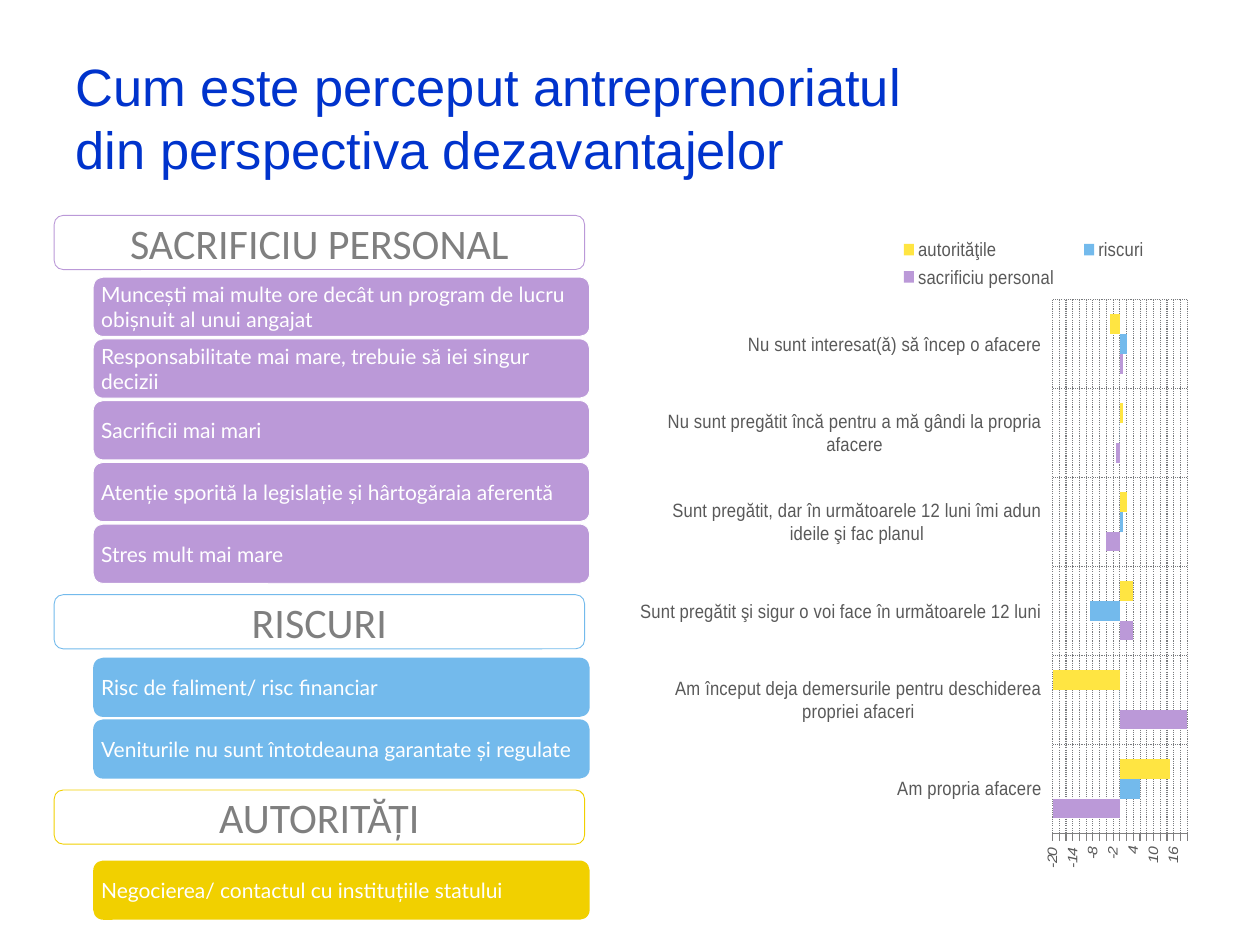
"""Build the slide on the perceived drawbacks of entrepreneurship."""
from lxml import etree
from pptx import Presentation
from pptx.chart.data import CategoryChartData
from pptx.dml.color import RGBColor
from pptx.enum.chart import XL_CHART_TYPE, XL_LEGEND_POSITION, XL_TICK_LABEL_POSITION, XL_TICK_MARK
from pptx.enum.dml import MSO_LINE
from pptx.enum.shapes import MSO_SHAPE
from pptx.enum.text import MSO_ANCHOR, PP_ALIGN
from pptx.oxml.ns import qn
from pptx.util import Inches, Pt

ROUNDED = MSO_SHAPE.ROUNDED_RECTANGLE
MIDDLE = MSO_ANCHOR.MIDDLE
LEFT, CENTER = PP_ALIGN.LEFT, PP_ALIGN.CENTER
NO_TICK, TICK_OUT = XL_TICK_MARK.NONE, XL_TICK_MARK.OUTSIDE
LOW = XL_TICK_LABEL_POSITION.LOW
BARS, LEGEND_TOP = XL_CHART_TYPE.BAR_CLUSTERED, XL_LEGEND_POSITION.TOP
DOTTED = MSO_LINE.ROUND_DOT

COLORS = {
    "title": "0033CC", "heading": "7F7F7F", "white": "FFFFFF", "label": "595959",
    "grid": "797B7E", "axis": "808080", "sacrifice": "BB99D8", "risk": "73BAEC",
    "authority": "F1D000", "authority_bar": "FFE542",
}
RGB = {name: RGBColor.from_string(value) for name, value in COLORS.items()}

HEADING_LEFT, HEADING_WIDTH, HEADING_HEIGHT = 0.43, 4.21, 0.43
ITEM_LEFT, ITEM_WIDTH, ITEM_HEIGHT = 0.74, 3.94, 0.47
ROW_STEP, SECTION_GAP = 0.49, 0.07

SECTIONS = [
    ("SACRIFICIU PERSONAL", "sacrifice", 0.49, True, [
        "Muncești mai multe ore decât un program de lucru obișnuit al unui angajat",
        "Responsabilitate mai mare, trebuie să iei singur decizii",
        "Sacrificii mai mari",
        "Atenție sporită la legislație și hârtogăraia aferentă",
        "Stres mult mai mare",
    ]),
    ("RISCURI", "risk", 0.5, False, [
        "Risc de faliment/ risc financiar",
        "Veniturile nu sunt întotdeauna garantate și regulate",
    ]),
    ("AUTORITĂȚI", "authority", 0.56, False, [
        "Negocierea/ contactul cu instituțiile statului",
    ]),
]
STAGES = [
    "Am propria afacere",
    "Am început deja demersurile pentru deschiderea propriei afaceri",
    "Sunt pregătit şi sigur o voi face în următoarele 12 luni",
    "Sunt pregătit, dar în următoarele 12 luni îmi adun ideile şi fac planul",
    "Nu sunt pregătit încă pentru a mă gândi la propria afacere",
    "Nu sunt interesat(ă) să încep o afacere",
]
SERIES = [
    ("sacrificiu personal", "sacrifice", (-21, 20, 4, -4, -1, 1)),
    ("riscuri", "risk", (6, 0, -9, 1, 0, 2)),
    ("autorităţile", "authority_bar", (15, -21, 4, 2, 1, -3)),
]


def add_box(slide, text, place, font, size, color, align):
    box = slide.shapes.add_shape(ROUNDED, *[Inches(length) for length in place])
    box.shadow.inherit = False
    frame = box.text_frame
    frame.word_wrap = True
    frame.vertical_anchor = MIDDLE
    frame.text = text
    paragraph = frame.paragraphs[0]
    paragraph.alignment = align
    run_font = paragraph.runs[0].font
    run_font.name, run_font.size, run_font.color.rgb = font, Pt(size), RGB[color]
    return box


def set_layout(part, x, y, w, h, inner=False):
    layout = part.find(qn("c:layout"))
    if layout is None:
        layout = etree.Element(qn("c:layout"))
        anchor = part.find(qn("c:legendPos"))
        if anchor is None:
            part.insert(0, layout)
        else:
            anchor.addnext(layout)
    for child in list(layout):
        layout.remove(child)
    manual = etree.SubElement(layout, qn("c:manualLayout"))
    settings = [("layoutTarget", "inner")] if inner else []
    settings += [("xMode", "edge"), ("yMode", "edge"), ("x", x), ("y", y), ("w", w), ("h", h)]
    for tag, value in settings:
        etree.SubElement(manual, qn(f"c:{tag}")).set("val", str(value))


prs = Presentation()
prs.slide_width, prs.slide_height = Inches(10), Inches(7.5)
slide = prs.slides.add_slide(prs.slide_layouts[5])

title = slide.shapes.title
title.left, title.top, title.width, title.height = Inches(0.5), Inches(0.3), Inches(9), Inches(1.25)
title.text_frame.text = "Cum este perceput antreprenoriatul\vdin perspectiva dezavantajelor"
title.text_frame.vertical_anchor = MIDDLE
heading = title.text_frame.paragraphs[0]
heading.alignment = LEFT
for run in heading.runs:
    run.font.name, run.font.size, run.font.color.rgb = "Arial", Pt(30), RGB["title"]

top = 1.71
for name, color, first_step, bordered, drawbacks in SECTIONS:
    header = add_box(slide, name, (HEADING_LEFT, top, HEADING_WIDTH, HEADING_HEIGHT),
                     "Calibri", 24, "heading", CENTER)
    header.fill.background()
    header.line.color.rgb = RGB[color]
    header.line.width = Pt(0.5)
    top += first_step
    for drawback in drawbacks:
        item = add_box(slide, drawback, (ITEM_LEFT, top, ITEM_WIDTH, ITEM_HEIGHT),
                       "Lato", 12, "white", LEFT)
        item.fill.solid()
        item.fill.fore_color.rgb = RGB[color]
        if bordered:
            item.line.color.rgb = RGB["white"]
            item.line.width = Pt(0.5)
        else:
            item.line.fill.background()
        frame = item.text_frame
        frame.margin_left = frame.margin_right = Inches(0.04)
        frame.margin_top = frame.margin_bottom = Inches(0.02)
        top += ROW_STEP
    top += SECTION_GAP

chart_data = CategoryChartData(number_format="0")
chart_data.categories = STAGES
for name, color, values in SERIES:
    chart_data.add_series(name, values)
chart = slide.shapes.add_chart(BARS, Inches(5.08), Inches(1.75), Inches(4.42), Inches(5.23),
                               chart_data).chart
chart.has_title = False
chart.font.name, chart.font.size = "Arial", Pt(18)
bars = chart.plots[0]
bars.gap_width, bars.overlap = 150, 0
bars.vary_by_categories = False
for series, (name, color, values) in zip(bars.series, SERIES):
    series.invert_if_negative = False
    series.format.fill.solid()
    series.format.fill.fore_color.rgb = RGB[color]

stage_axis, score_axis = chart.category_axis, chart.value_axis
stage_axis.tick_label_position = LOW
stage_axis.major_tick_mark = NO_TICK
stage_axis.format.line.fill.background()
score_axis.minimum_scale, score_axis.maximum_scale, score_axis.major_unit = -20, 20, 2
score_axis.major_tick_mark = TICK_OUT
score_axis.tick_labels.number_format = "0"
score_axis.tick_labels.number_format_is_linked = False
score_axis.format.line.color.rgb = RGB["axis"]
for axis in (stage_axis, score_axis):
    axis.minor_tick_mark = NO_TICK
    axis.has_major_gridlines = True
    grid_line = axis.major_gridlines.format.line
    grid_line.color.rgb, grid_line.width, grid_line.dash_style = RGB["grid"], Pt(0.75), DOTTED

chart.has_legend = True
legend = chart.legend
legend.position = LEGEND_TOP
legend.include_in_layout = False
for font, size in ((stage_axis.tick_labels.font, 11), (score_axis.tick_labels.font, 9),
                   (legend.font, 11)):
    font.name, font.size, font.color.rgb = "Arial", Pt(size), RGB["label"]
score_axis.tick_labels.font.italic = True
score_body = score_axis._element.find(qn("c:txPr")).find(qn("a:bodyPr"))
score_body.set("rot", "-5400000")
score_body.set("vert", "horz")

set_layout(chart._chartSpace.chart.plotArea, 0.7, 0.12, 0.28, 0.81, inner=True)
set_layout(legend._element, 0.34, 0.02, 0.6, 0.09)

prs.save("out.pptx")
